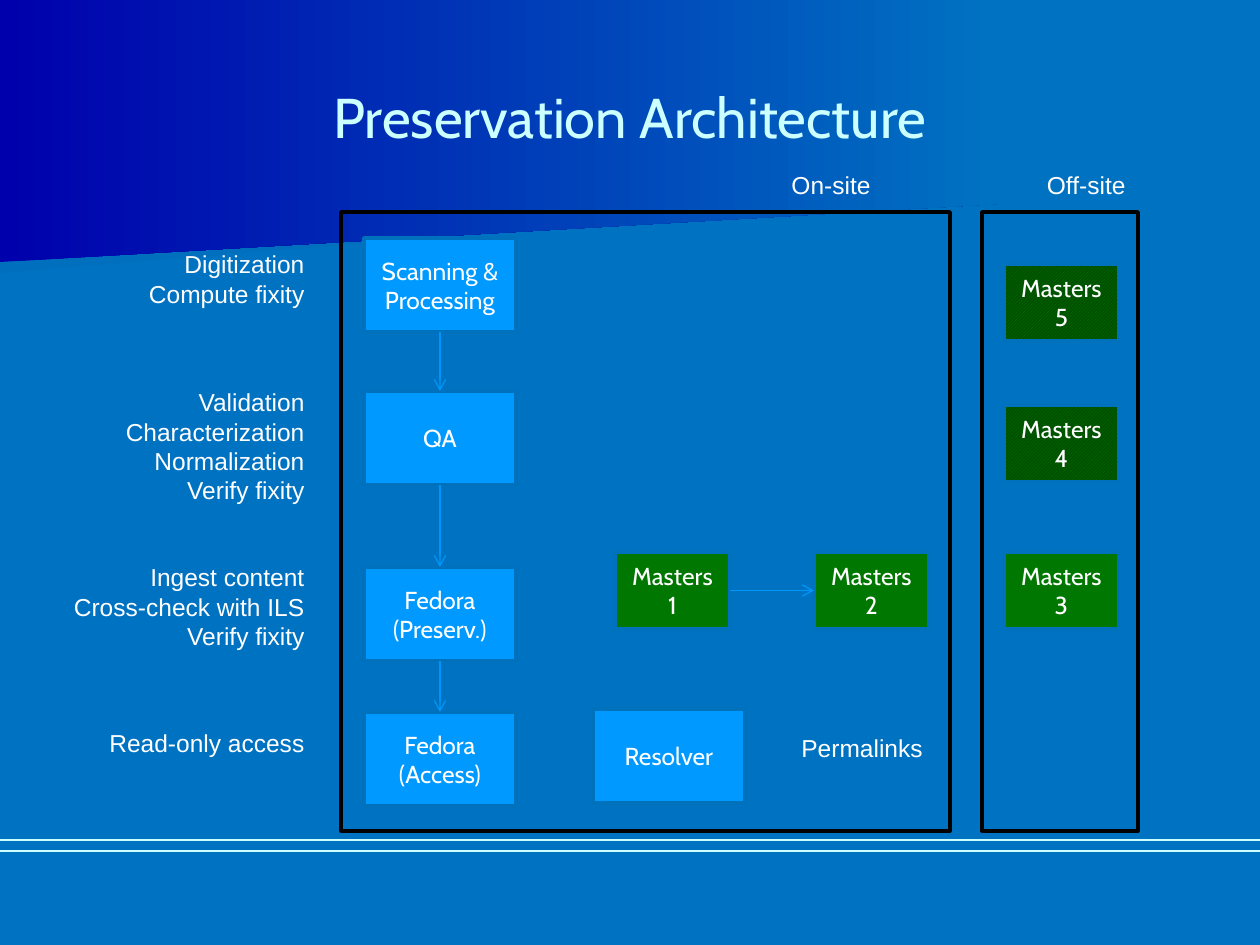
from typing import NamedTuple

from lxml.etree import SubElement
from pptx import Presentation
from pptx.dml.color import RGBColor
from pptx.enum.dml import MSO_PATTERN as Pattern
from pptx.enum.shapes import MSO_CONNECTOR as Link, MSO_SHAPE as Shape
from pptx.enum.text import MSO_ANCHOR as Anchor, MSO_AUTO_SIZE as Fit, PP_ALIGN as Align
from pptx.oxml.ns import qn
from pptx.util import Emu, Pt

SCALE = 914400 / 126  # EMU in one px
WHITE, PALE, BLUE, GREEN = "FFFFFF", "CCFFFF", "0099FF", "007700"
BACK, EDGE, ARROW = "0072C2", "0071BD", "0096F9"
TOP, LEFT, BOTTOM, RIGHT = range(4)  # connection sites of a rectangle


class Box(NamedTuple):
    text: str
    x: int
    y: int
    w: int
    h: int
    fill: str
    hatch: bool = False


class Label(NamedTuple):
    text: str
    x: int
    y: int
    w: int
    h: int
    align: Align = Align.RIGHT


def step(text: str, x: int, y: int) -> Box:
    return Box(text, x, y, 152, 94, BLUE)


def master(num: int, x: int, y: int, hatch: bool = False) -> Box:
    return Box(f"Masters\n{num}", x, y, 115, 77, GREEN, hatch)


def note(text: str, y: int, h: int) -> Label:
    return Label(text, 44, y, 273, h)


STEPS = [
    step("Scanning & Processing", 364, 238),
    step("QA", 364, 391),
    step("Fedora\n(Preserv.)", 364, 567),
    step("Fedora\n(Access)", 364, 712),
]
RESOLVER = step("Resolver", 593, 709)
MASTERS = [
    master(1, 615, 552),
    master(2, 814, 552),
    master(3, 1004, 552),
    master(4, 1004, 405, True),
    master(5, 1004, 264, True),
]
LABELS = [
    note("Digitization\nCompute fixity", 243, 72),
    note("Validation\nCharacterization\nNormalization\nVerify fixity", 381, 131),
    note("Ingest content\nCross-check with ILS\nVerify fixity", 556, 102),
    note("Read-only access", 722, 43),
    Label("Permalinks", 789, 727, 272, 43, Align.LEFT),
    Label("On-site", 771, 164, 112, 43),
    Label("Off-site", 1026, 164, 112, 43),
]
FRAMES = [(341, 212, 609, 619), (982, 212, 156, 619)]
SWOOSHES = [
    ([(980, 193), (0, 273), (0, 127), (982, 127), (980, 161)], "006FBD"),
    ([(998, 204), (0, 262), (0, 0), (998, 0)], "0000AC"),
]


def px(*vals: int) -> list[Emu]:
    return [Emu(round(val * SCALE)) for val in vals]


def rgb(code: str) -> RGBColor:
    return RGBColor.from_string(code)


def write(frame, text: str, align: Align, face: str, size: int = 14, color: str = WHITE) -> None:
    frame.word_wrap = True
    frame.text = text
    for par in frame.paragraphs:
        par.alignment = align
        par.font.name = face
        par.font.size = Pt(size)
        par.font.color.rgb = rgb(color)


def outline(shape, color: str) -> None:
    shape.shadow.inherit = False
    shape.line.color.rgb = rgb(color)
    shape.line.width = Pt(2)


def add_box(shapes, box: Box):
    shape = shapes.add_shape(Shape.RECTANGLE, *px(box.x, box.y, box.w, box.h))
    outline(shape, EDGE)
    fill = shape.fill
    if box.hatch:
        fill.patterned()
        fill.pattern = Pattern.DARK_UPWARD_DIAGONAL
        fill.fore_color.rgb = rgb(box.fill)
        fill.back_color.rgb = rgb("005000")
    else:
        fill.solid()
        fill.fore_color.rgb = rgb(box.fill)
    shape.text_frame.vertical_anchor = Anchor.MIDDLE
    write(shape.text_frame, box.text, Align.CENTER, "Cabin")
    return shape


def add_label(shapes, label: Label) -> None:
    frame = shapes.add_textbox(*px(label.x, label.y, label.w, label.h)).text_frame
    write(frame, label.text, label.align, "Arial")
    frame.auto_size = Fit.SHAPE_TO_FIT_TEXT


def add_line(shapes, ends: tuple[int, ...], color: str, width: float):
    line = shapes.add_connector(Link.STRAIGHT, *px(*ends))
    line.line.color.rgb = rgb(color)
    line.line.width = Pt(width)
    SubElement(line._element.spPr, qn("a:effectLst"))
    return line


def add_arrow(shapes, start, out: int, end, into: int) -> None:
    line = add_line(shapes, (0, 0, 0, 0), ARROW, 0.75)
    line.begin_connect(start, out)
    line.end_connect(end, into)
    SubElement(line.line._get_or_add_ln(), qn("a:tailEnd"), type="arrow")


def add_swoosh(shapes, points: list[tuple[int, int]], color: str) -> None:
    pen = shapes.build_freeform(*points[0], scale=SCALE)
    pen.add_line_segments(points[1:], close=True)
    shape = pen.convert_to_shape()
    shape.shadow.inherit = False
    shape.line.fill.background()
    shape.fill.gradient()
    shape.fill.gradient_angle = 0
    for stop, code in zip(shape.fill.gradient_stops, (color, BACK)):
        stop.color.rgb = rgb(code)


def main() -> None:
    deck = Presentation()
    deck.slide_width, deck.slide_height = px(1260, 945)
    slide = deck.slides.add_slide(deck.slide_layouts[5])
    shapes = slide.shapes
    slide.background.fill.solid()
    slide.background.fill.fore_color.rgb = rgb(BACK)

    # Backdrop
    for points, color in SWOOSHES:
        add_swoosh(shapes, points, color)
    for y in (840, 851):
        add_line(shapes, (0, y, 1260, y), PALE, 1)

    # Title, brought in front of the backdrop
    title = shapes.title
    title.left, title.top, title.width, title.height = px(63, 38, 1134, 157)
    title.text_frame.vertical_anchor = Anchor.MIDDLE
    write(title.text_frame, "Preservation Architecture", Align.CENTER, "Cabin", 32, PALE)
    shapes._spTree.append(title._element)

    # Workflow and stored masters
    steps = [add_box(shapes, box) for box in STEPS]
    add_box(shapes, RESOLVER)
    masters = [add_box(shapes, box) for box in MASTERS]
    for start, end in zip(steps, steps[1:]):
        add_arrow(shapes, start, BOTTOM, end, TOP)
    add_arrow(shapes, masters[0], RIGHT, masters[1], LEFT)

    # Site frames
    for area in FRAMES:
        frame = shapes.add_shape(Shape.RECTANGLE, *px(*area))
        frame.fill.background()
        outline(frame, "000000")

    # Notes and site names
    for label in LABELS:
        add_label(shapes, label)

    deck.save("out.pptx")


if __name__ == "__main__":
    main()
